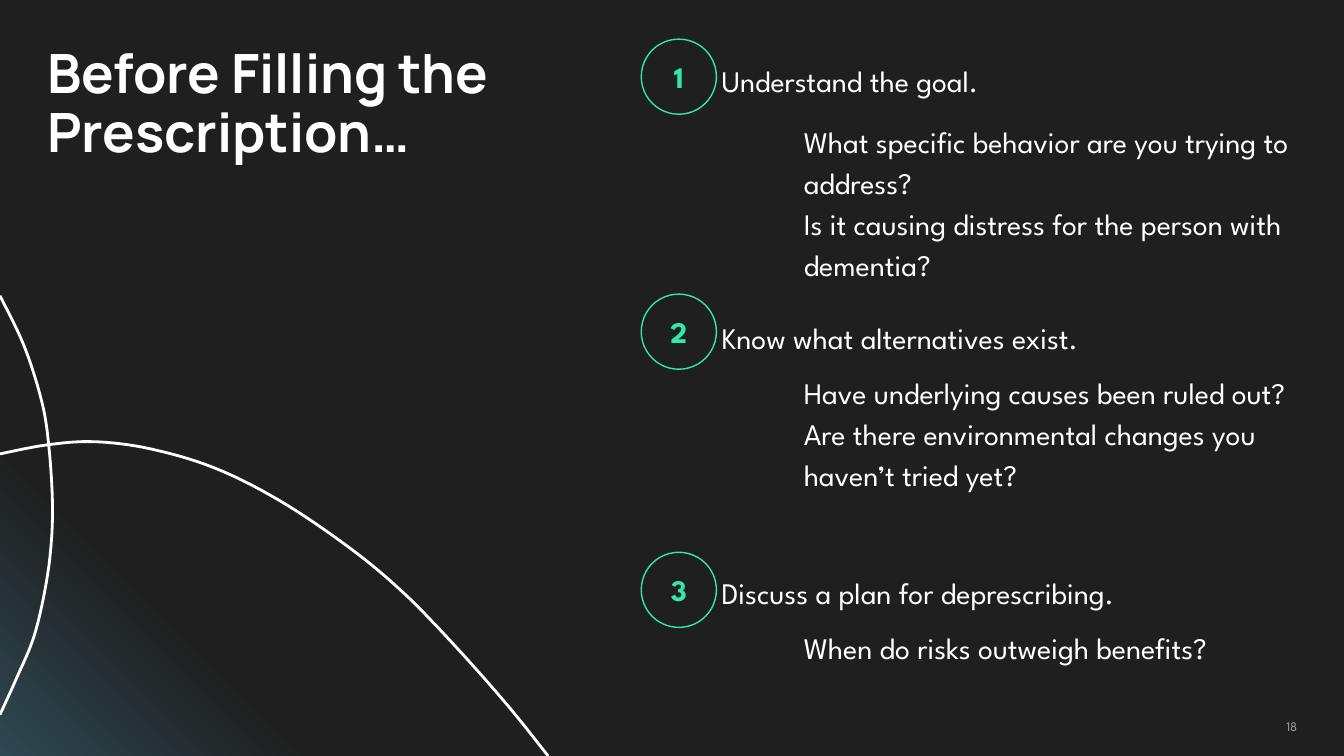
from lxml import etree
from pptx import Presentation
from pptx.dml.color import RGBColor
from pptx.enum.shapes import MSO_SHAPE
from pptx.enum.text import MSO_ANCHOR, MSO_AUTO_SIZE, PP_ALIGN
from pptx.oxml.ns import qn
from pptx.util import Cm, Pt

LEFT, CENTER, RIGHT = PP_ALIGN.LEFT, PP_ALIGN.CENTER, PP_ALIGN.RIGHT
TOP, MIDDLE = MSO_ANCHOR.TOP, MSO_ANCHOR.MIDDLE
OVAL, RIGHT_TRIANGLE = MSO_SHAPE.OVAL, MSO_SHAPE.RIGHT_TRIANGLE

COLORS = {
    "background": "1F1F1F",
    "glow": "2F4852",
    "white": "FFFFFF",
    "green": "30E8B0",
    "gray": "93A2A2",
}
COLORS = {name: RGBColor.from_string(value) for name, value in COLORS.items()}


def write(shape, *lines, size=16, font="League Spartan", color="white",
          bold=False, align=LEFT, anchor=TOP, spacing=1.0):
    """Fill a shape with one unbulleted paragraph per line."""
    frame = shape.text_frame
    frame.word_wrap = True
    frame.auto_size = MSO_AUTO_SIZE.NONE
    frame.vertical_anchor = anchor
    frame.margin_left = frame.margin_right = Cm(0.25)
    frame.margin_top = frame.margin_bottom = Cm(0.25)
    for index, line in enumerate(lines):
        paragraph = frame.add_paragraph() if index else frame.paragraphs[0]
        paragraph.text = line
        properties = paragraph._p.get_or_add_pPr()
        properties.set("marL", "0")
        properties.set("indent", "0")
        etree.SubElement(properties, qn("a:buNone"))
        paragraph.alignment = align
        paragraph.line_spacing = spacing
        paragraph.space_before = paragraph.space_after = Pt(0)
        paragraph.font.name = font
        paragraph.font.size = Pt(size)
        paragraph.font.bold = bold
        paragraph.font.color.rgb = COLORS[color]


def smooth(points, steps=8):
    """Return points in EMU on a Catmull-Rom curve through points in cm."""
    padded = [points[0], *points, points[-1]]
    curve = []
    for a, b, c, d in zip(padded, padded[1:], padded[2:], padded[3:]):
        for step in range(steps):
            t = step / steps
            curve.append(tuple(
                Cm(q + (r - p) * t / 2
                   + (2 * p - 5 * q + 4 * r - s) * t ** 2 / 2
                   + (3 * q - p - 3 * r + s) * t ** 3 / 2)
                for p, q, r, s in zip(a, b, c, d)))
    return curve + [tuple(Cm(value) for value in points[-1])]


presentation = Presentation()
presentation.slide_width, presentation.slide_height = Cm(25.4), Cm(14.29)
slide = presentation.slides.add_slide(presentation.slide_layouts[4])
slide.background.fill.solid()
slide.background.fill.fore_color.rgb = COLORS["background"]

# Glow in the lower left corner
glow = slide.shapes.add_shape(RIGHT_TRIANGLE, 0, Cm(8.37), Cm(5.92), Cm(5.92))
glow.shadow.inherit = False
glow.line.fill.background()
glow.fill.gradient()
glow.fill.gradient_angle = 45
for stop, color, position in zip(glow.fill.gradient_stops,
                                 ("glow", "background"), (0, 0.5)):
    stop.color.rgb = COLORS[color]
    stop.position = position

# Crossing white curves
CURVES = [
    [(0, 5.59), (0.46, 6.55), (0.79, 7.59), (0.92, 8.4), (0.99, 9.42),
     (0.97, 10.26), (0.86, 11.1), (0.64, 12.04), (0.3, 12.85), (0, 13.51)],
    [(0, 8.58), (0.89, 8.41), (1.78, 8.35), (2.82, 8.48), (4.04, 8.84),
     (5.28, 9.46), (6.6, 10.35), (7.62, 11.2), (8.61, 12.22), (9.6, 13.34),
     (10.36, 14.29)],
]
for points in CURVES:
    start, *rest = smooth(points)
    builder = slide.shapes.build_freeform(*start)
    builder.add_line_segments(rest, close=False)
    curve = builder.convert_to_shape()
    curve.shadow.inherit = False
    curve.fill.background()
    curve.line.color.rgb = COLORS["white"]
    curve.line.width = Pt(1.5)

title = slide.shapes.title
title.left, title.top, title.width, title.height = (
    Cm(0.64), Cm(0.64), Cm(10.26), Cm(2.74))
write(title, "Before Filling the Prescription…", size=29, font="Manrope",
      bold=True, spacing=0.9)

# Numbered steps: circle top, heading top, heading, detail top and height, details
STEPS = [
    (0.74, 0.84, "Understand the goal.", 1.98, 3.71,
     ["What specific behavior are you trying to address?",
      "Is it causing distress for the person with dementia?"]),
    (5.56, 5.69, "Know what alternatives exist.", 6.73, 3.71,
     ["Have underlying causes been ruled out?",
      "Are there environmental changes you haven’t tried yet?"]),
    (10.44, 10.52, "Discuss a plan for deprescribing.", 11.56, 1.63,
     ["When do risks outweigh benefits?"]),
]
*bodies, spare = [slide.placeholders[index] for index in (1, 2, 3, 4)]
spare.element.getparent().remove(spare.element)

for number, (body, step) in enumerate(zip(bodies, STEPS), start=1):
    circle_top, heading_top, heading, detail_top, detail_height, details = step
    heading_box = slide.shapes.add_textbox(
        Cm(13.39), Cm(heading_top), Cm(11.38), Cm(1.63))
    write(heading_box, heading, spacing=1.15)

    body.left, body.top, body.width, body.height = (
        Cm(14.94), Cm(detail_top), Cm(9.83), Cm(detail_height))
    write(body, *details, spacing=1.15)

    circle = slide.shapes.add_shape(
        OVAL, Cm(12.12), Cm(circle_top), Cm(1.42), Cm(1.42))
    circle.shadow.inherit = False
    circle.fill.background()
    circle.line.color.rgb = COLORS["green"]
    circle.line.width = Pt(0.75)
    write(circle, str(number), color="green", bold=True, align=CENTER,
          anchor=MIDDLE)

page_number = slide.shapes.add_textbox(Cm(18.67), Cm(13.34), Cm(6.1), Cm(0.81))
write(page_number, "18", size=7, color="gray", align=RIGHT)

presentation.save("out.pptx")
